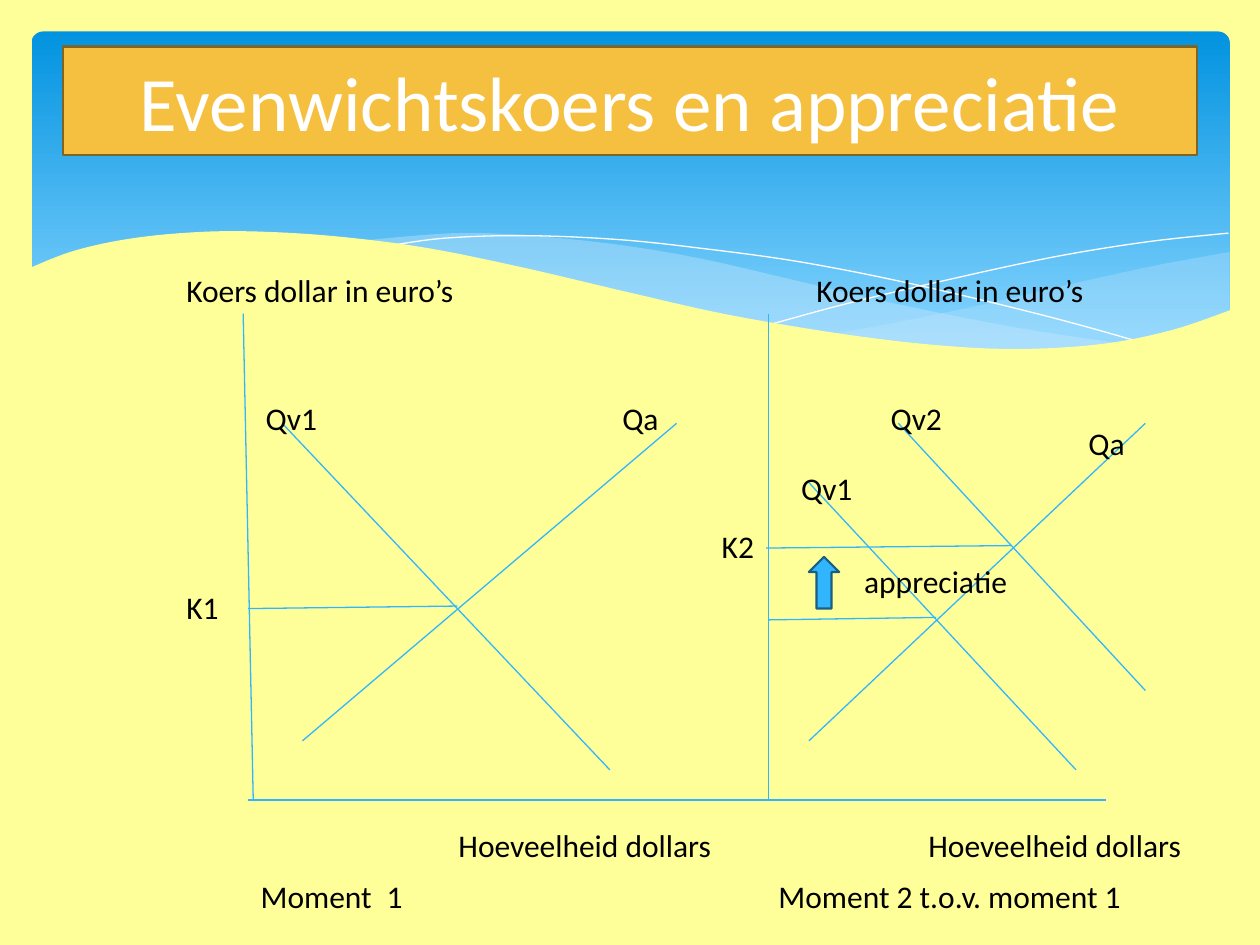
from dataclasses import dataclass

from lxml import etree
from pptx import Presentation
from pptx import util as u
from pptx.dml.color import RGBColor
from pptx.enum import shapes, text
from pptx.oxml.ns import qn


@dataclass(frozen=True)
class Theme:
    font: str = "Calibri"
    title_size: float = 44
    label_size: float = 18
    axis_width: float = 0.75
    border_width: float = 1.25
    paper: str = "FFFF99"
    sky_top: str = "0293E0"
    sky_bottom: str = "83D3FE"
    mist: str = "C6E7FC"
    white: str = "FFFFFF"
    black: str = "000000"
    gold: str = "F5C040"
    gold_border: str = "806421"
    blue: str = "31B6FD"
    blue_border: str = "195F84"


def rgb(value):
    return RGBColor.from_string(value)


def curve(knots, steps=6):
    """Return points on a smooth curve through the knots."""
    ends = [knots[0], *knots, knots[-1]]
    points = [knots[0]]
    for a, b, c, d in zip(ends, ends[1:], ends[2:], ends[3:]):
        for step in range(1, steps + 1):
            t = step / steps
            points.append(tuple(
                0.5 * (2 * q + (r - p) * t + (2 * p - 5 * q + 4 * r - s) * t ** 2
                       + (3 * q - p - 3 * r + s) * t ** 3)
                for p, q, r, s in zip(a, b, c, d)))
    return points


def write(frame, content, *, font, size, color, align=None, anchor=None, tabs=()):
    """Put one formatted paragraph in a text frame."""
    frame.word_wrap = True
    if anchor is not None:
        frame.vertical_anchor = anchor
    paragraph = frame.paragraphs[0]
    paragraph.text = content
    if align is not None:
        paragraph.alignment = align
    if tabs:
        stops = etree.SubElement(paragraph._p.get_or_add_pPr(), qn("a:tabLst"))
        for stop in tabs:
            etree.SubElement(stops, qn("a:tab"), pos=str(u.Inches(stop)), algn="l")
    for run in paragraph.runs:
        run.font.name = font
        run.font.size = u.Pt(size)
        run.font.color.rgb = rgb(color)


class Board:
    def __init__(self, slide, theme):
        self.slide = slide
        self.theme = theme
        slide.background.fill.solid()
        slide.background.fill.fore_color.rgb = rgb(theme.paper)

    def paint(self, item, fill=None, line=None, width=0, opacity=None):
        item.shadow.inherit = False
        if fill:
            item.fill.solid()
            item.fill.fore_color.rgb = rgb(fill)
            if opacity:
                color = item.fill._xPr.find(qn("a:solidFill"))[0]
                etree.SubElement(color, qn("a:alpha"), val=str(opacity * 1000))
        else:
            item.fill.background()
        if line:
            item.line.color.rgb = rgb(line)
            item.line.width = u.Pt(width)
        else:
            item.line.fill.background()

    def shape(self, kind, box, **style):
        item = self.slide.shapes.add_shape(kind, *map(u.Inches, box))
        self.paint(item, **style)
        return item

    def outline(self, points, close=True, **style):
        start, *rest = [(u.Inches(x), u.Inches(y)) for x, y in points]
        builder = self.slide.shapes.build_freeform(*start)
        builder.add_line_segments(rest, close=close)
        self.paint(builder.convert_to_shape(), **style)

    def line(self, start, end):
        item = self.slide.shapes.add_connector(
            shapes.MSO_CONNECTOR.STRAIGHT, *map(u.Inches, (*start, *end)))
        item.line.color.rgb = rgb(self.theme.blue)
        item.line.width = u.Pt(self.theme.axis_width)
        etree.SubElement(item._element.spPr, qn("a:effectLst"))

    def label(self, content, left, top, width, tabs=()):
        item = self.slide.shapes.add_textbox(*map(u.Inches, (left, top, width, 0.4)))
        write(item.text_frame, content, font=self.theme.font,
              size=self.theme.label_size, color=self.theme.black, tabs=tabs)


def draw_waves(board):
    theme = board.theme
    # Sky
    sky = board.shape(shapes.MSO_SHAPE.ROUNDED_RECTANGLE, (0.25, 0.25, 9.51, 2.7))
    sky.adjustments[0] = 0.034
    sky.fill.gradient()
    sky.fill.gradient_angle = 270
    for stop, color, position in zip(sky.fill.gradient_stops,
                                     (theme.sky_top, theme.sky_bottom), (0, 0.9)):
        stop.color.rgb = rgb(color)
        stop.position = position

    # Translucent waves
    right_top = [(9.76, 2), (9.21, 2.1), (8.61, 2.23), (7.79, 2.42), (7.06, 2.57), (6.61, 2.65)]
    right_bottom = [(6.61, 2.65), (7.19, 2.72), (7.69, 2.77), (8.24, 2.77),
                    (8.81, 2.73), (9.35, 2.62), (9.76, 2.47)]
    board.outline(curve(right_top) + curve(right_bottom), fill=theme.mist, opacity=29)
    middle_top = [(8.93, 2.73), (8.07, 2.6), (7.06, 2.4), (6.29, 2.22), (5.55, 2.05),
                  (4.89, 1.94), (4.2, 1.87), (3.61, 1.85), (2.86, 1.91)]
    middle_bottom = [(2.86, 1.91), (3.62, 2.03), (4.49, 2.22), (5.3, 2.4), (6.01, 2.55),
                     (6.8, 2.68), (7.48, 2.76), (8.18, 2.78), (8.93, 2.73)]
    board.outline(curve(middle_top) + curve(middle_bottom), fill=theme.mist, opacity=40)

    # Thin crests
    falling = [(3.09, 1.95), (3.53, 1.89), (4.16, 1.87), (4.89, 1.9), (5.56, 1.97),
               (6.36, 2.08), (7.27, 2.26), (8.31, 2.51), (9.07, 2.72)]
    rising = [(6.13, 2.57), (6.72, 2.41), (7.48, 2.23), (8.36, 2.04), (9.1, 1.92), (9.75, 1.85)]
    for crest in (falling, rising):
        board.outline(curve(crest), close=False, line=theme.white)

    # Front wave in the paper colour
    front = [(9.77, 2.46), (9.3, 2.62), (8.75, 2.73), (8.09, 2.77), (7.44, 2.74), (6.68, 2.65),
             (5.79, 2.5), (5.03, 2.33), (4.18, 2.13), (3.4, 1.97), (2.71, 1.88), (2.11, 1.84),
             (1.61, 1.84), (1.06, 1.89), (0.59, 1.99), (0.23, 2.13)]
    board.outline(curve(front) + [(0.23, 3.29), (9.77, 3.29)], fill=theme.paper)


def draw_title(board):
    theme = board.theme
    title = board.shape(shapes.MSO_SHAPE.RECTANGLE, (0.5, 0.37, 9, 0.86), fill=theme.gold,
                        line=theme.gold_border, width=theme.border_width)
    write(title.text_frame, "Evenwichtskoers en appreciatie", font=theme.font,
          size=theme.title_size, color=theme.white,
          align=text.PP_ALIGN.CENTER, anchor=text.MSO_ANCHOR.MIDDLE)


def draw_graphs(board):
    theme = board.theme
    axes = [((1.93, 2.49), (2.01, 6.35)), ((1.97, 6.35), (8.78, 6.35)), ((6.1, 2.49), (6.1, 6.35))]
    demand = [((2.24, 3.36), (4.84, 6.11)), ((6.42, 3.83), (8.54, 6.11)), ((7.13, 3.36), (9.09, 5.48))]
    supply = [((2.4, 5.88), (5.37, 3.36)), ((6.42, 5.88), (9.09, 3.36))]
    rates = [((3.63, 4.81), (1.97, 4.83)), ((7.43, 4.9), (6.1, 4.92)), ((8.03, 4.33), (6.08, 4.35))]
    for start, end in axes + demand + supply + rates:
        board.line(start, end)

    # Labels of axes, curves and rates
    board.label("Koers dollar in euro’s\tKoers dollar in euro’s", 1.38, 2.1, 8.11, tabs=[5])
    board.label("Hoeveelheid dollars\tHoeveelheid dollars", 3.54, 6.51, 6.26, tabs=[3.73])
    board.label("Moment \t1\tMoment 2 t.o.v. moment 1", 1.97, 6.91, 7.68, tabs=[1, 4.11])
    for name, left, top, width in [
            ("K1", 1.38, 4.62, 0.55), ("K2", 5.63, 4.13, 0.63),
            ("Qv1", 2.01, 3.12, 1.42), ("Qa", 4.84, 3.12, 0.59),
            ("Qv1", 6.26, 3.67, 0.8), ("Qv2", 6.97, 3.12, 1.06),
            ("Qa", 8.54, 3.32, 0.55)]:
        board.label(name, left, top, width)

    # Appreciation
    board.shape(shapes.MSO_SHAPE.UP_ARROW, (6.42, 4.42, 0.24, 0.41), fill=theme.blue,
                line=theme.blue_border, width=theme.border_width)
    board.label("appreciatie", 6.76, 4.41, 1.55)


def main():
    deck = Presentation()
    deck.slide_width, deck.slide_height = u.Inches(10), u.Inches(7.5)
    board = Board(deck.slides.add_slide(deck.slide_layouts[6]), Theme())
    draw_waves(board)
    draw_title(board)
    draw_graphs(board)
    deck.save("out.pptx")


if __name__ == "__main__":
    main()
